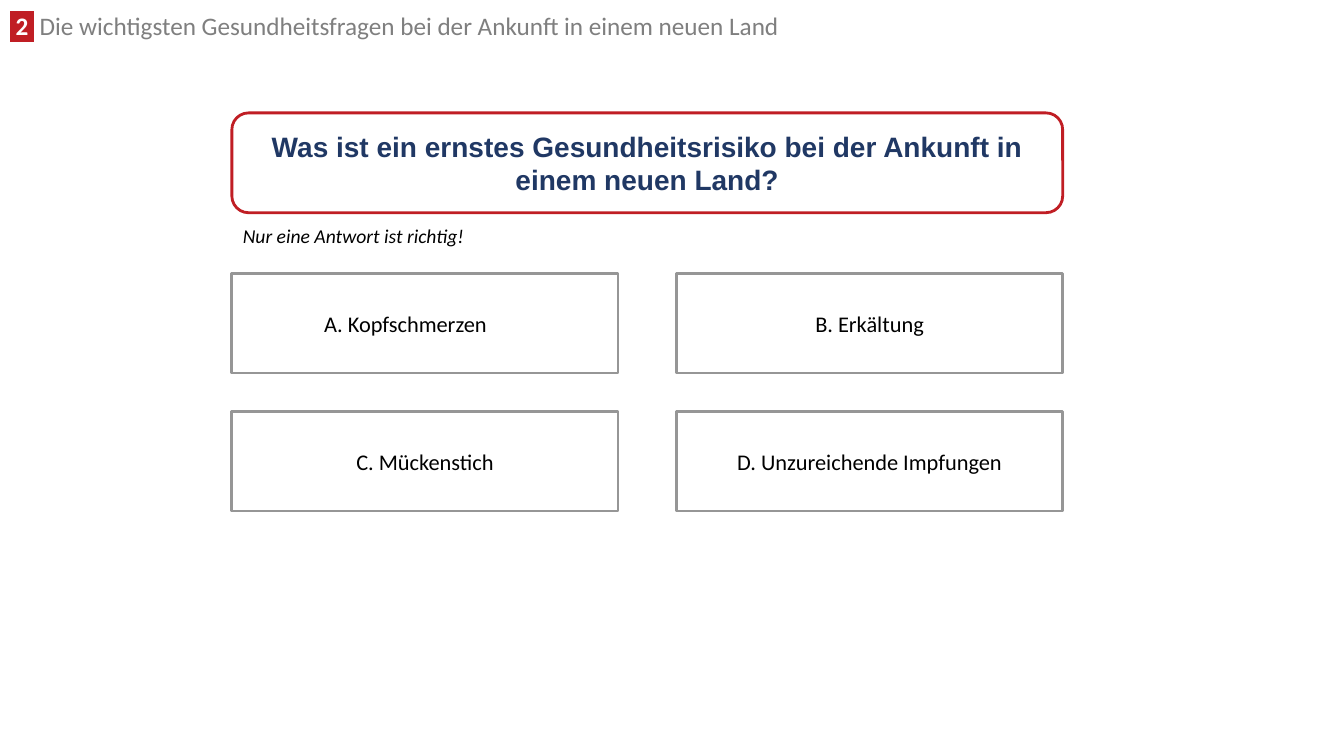
from lxml.etree import SubElement
from pptx import Presentation
from pptx.dml.color import RGBColor
from pptx.enum.shapes import MSO_SHAPE
from pptx.enum.text import MSO_ANCHOR, MSO_AUTO_SIZE, PP_ALIGN
from pptx.oxml.ns import qn
from pptx.util import Inches, Pt

CHAPTER_NUMBER = " 2 "
CHAPTER_TITLE = " Die wichtigsten Gesundheitsfragen bei der Ankunft in einem neuen Land"
QUESTION = "Was ist ein ernstes Gesundheitsrisiko bei der Ankunft in einem neuen Land?"
HINT = "Nur eine Antwort ist richtig!"
ANSWERS = [
    "A. Kopfschmerzen\t",
    "B. Erkältung",
    "C. Mückenstich",
    "D. Unzureichende Impfungen",
]

THEME = {
    "red": "C01E24", "navy": "203864", "gray": "7F7F7F", "border": "969696",
    "white": "FFFFFF", "black": "000000",
    "body_font": "Calibri", "question_font": "Arial",
    "chapter_size": 18, "question_size": 20, "hint_size": 14, "answer_size": 16,
    "border_width": 2,
}

LEFT, QUESTION_TOP, HINT_TOP, ANSWER_TOP = 2.3, 1.12, 2.17, 2.71
QUESTION_WIDTH, ANSWER_WIDTH, BOX_HEIGHT = 8.24, 3.83, 0.99
COLUMN_STEP = QUESTION_WIDTH - ANSWER_WIDTH
ROW_STEP = 1.37
COLUMNS = 2


def color(name):
    return RGBColor.from_string(THEME[name])


def add_text(paragraph, text, *, size, ink="black", font="body_font",
             bold=False, italic=False, highlight=None):
    run = paragraph.add_run()
    run.text = text
    run.font.size = Pt(THEME[size])
    run.font.bold = bold
    run.font.italic = italic
    run.font.color.rgb = color(ink)
    if highlight:
        # The schema places the highlight between the fill and the typeface.
        mark = SubElement(run.font._element, qn("a:highlight"))
        SubElement(mark, qn("a:srgbClr")).set("val", THEME[highlight])
    run.font.name = THEME[font]


def add_label(slide, left, top, width, height):
    """Add a growing text box and return its first paragraph."""
    frame = slide.shapes.add_textbox(
        Inches(left), Inches(top), Inches(width), Inches(height)).text_frame
    frame.word_wrap = True
    frame.auto_size = MSO_AUTO_SIZE.SHAPE_TO_FIT_TEXT
    return frame.paragraphs[0]


def add_box(slide, outline, left, top, width, border):
    """Add a white outlined box and return its centred paragraph."""
    box = slide.shapes.add_shape(
        outline, Inches(left), Inches(top), Inches(width), Inches(BOX_HEIGHT))
    box.shadow.inherit = False
    box.fill.solid()
    box.fill.fore_color.rgb = color("white")
    box.line.color.rgb = color(border)
    box.line.width = Pt(THEME["border_width"])
    box.text_frame.word_wrap = True
    box.text_frame.vertical_anchor = MSO_ANCHOR.MIDDLE
    paragraph = box.text_frame.paragraphs[0]
    paragraph.alignment = PP_ALIGN.CENTER
    return paragraph


def main():
    deck = Presentation()
    deck.slide_width, deck.slide_height = Inches(13.33), Inches(7.5)
    slide = deck.slides.add_slide(deck.slide_layouts[6])

    chapter = add_label(slide, 0, 0.11, 8.57, 0.34)
    chapter.line_spacing = 0.8
    add_text(chapter, CHAPTER_NUMBER, size="chapter_size", ink="white",
             bold=True, highlight="red")
    add_text(chapter, CHAPTER_TITLE, size="chapter_size", ink="gray")

    question = add_box(slide, MSO_SHAPE.ROUNDED_RECTANGLE, LEFT, QUESTION_TOP,
                       QUESTION_WIDTH, "red")
    add_text(question, QUESTION, size="question_size", ink="navy",
             font="question_font", bold=True)

    hint = add_label(slide, LEFT + 0.01, HINT_TOP, 2.53, 0.34)
    add_text(hint, HINT, size="hint_size", italic=True)

    for index, answer in enumerate(ANSWERS):
        row, column = divmod(index, COLUMNS)
        choice = add_box(slide, MSO_SHAPE.RECTANGLE, LEFT + column * COLUMN_STEP,
                         ANSWER_TOP + row * ROW_STEP, ANSWER_WIDTH, "border")
        add_text(choice, answer, size="answer_size")

    deck.save("out.pptx")


if __name__ == "__main__":
    main()
